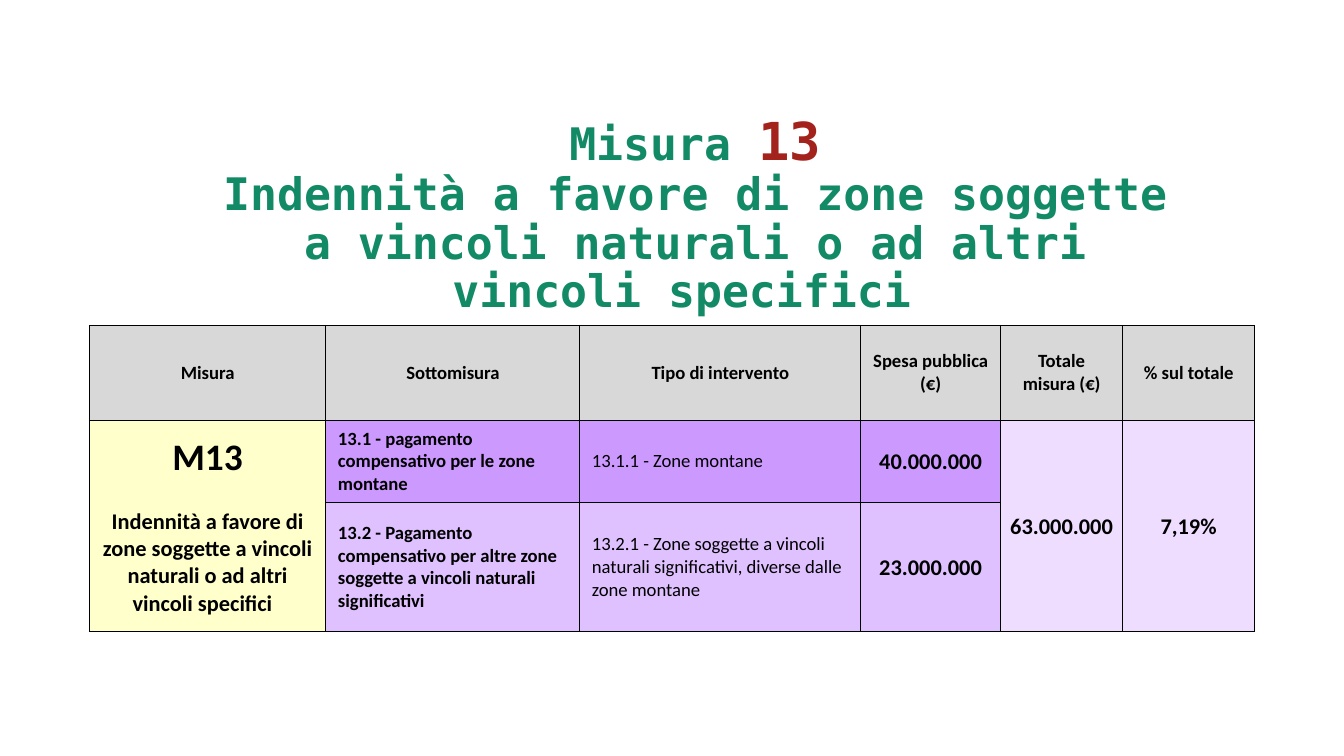
from lxml import etree
from pptx import Presentation
from pptx import util as u
from pptx.dml.color import RGBColor
from pptx.enum import text
from pptx.oxml.ns import qn

BLACK = RGBColor(0x00, 0x00, 0x00)
GREEN = RGBColor(0x12, 0x8A, 0x66)
RED = RGBColor(0xA3, 0x23, 0x1C)
GREY = RGBColor(0xD8, 0xD8, 0xD8)
YELLOW = RGBColor(0xFF, 0xFF, 0xCC)
VIOLET = RGBColor(0xCC, 0x99, 0xFF)
LILAC = RGBColor(0xE0, 0xC1, 0xFF)
PALE = RGBColor(0xEE, 0xDD, 0xFF)

CENTER, LEFT = text.PP_ALIGN.CENTER, text.PP_ALIGN.LEFT
WIDE = (0.09, 0.04, 0.09, 0.04)
TIGHT = (0.01, 0.01, 0.01, 0)

# Percent of the slide's width and height
COLUMNS = (17.6, 18.9, 20.9, 10.4, 9.1, 9.8)
ROWS = (12.6, 10.85, 17.1)

HEADERS = ("Misura", "Sottomisura", "Tipo di intervento", "Spesa pubblica \n(€)",
           "Totale misura (€)", "% sul totale")
SUBMEASURES = (
    ("13.1 - pagamento compensativo per le zone montane",
     "13.1.1 - Zone montane", "40.000.000", VIOLET),
    ("13.2 - Pagamento compensativo per altre zone soggette a vincoli naturali significativi",
     "13.2.1 - Zone soggette a vincoli naturali significativi, diverse dalle zone montane",
     "23.000.000", LILAC),
)
NAME = "Indennità a favore di zone soggette a vincoli naturali o ad altri vincoli specifici "


class Deck:
    """Holds the style and the current slide; lengths are percents of its size."""
    title_font, table_font = "DejaVu Sans Mono", "Calibri"

    def __init__(self, prs):
        self.prs = prs
        self.slide = prs.slides.add_slide(prs.slide_layouts[5])

    def box(self, left, top, width, height):
        return self.x(left), self.y(top), self.x(width), self.y(height)

    def x(self, percent):
        return u.Emu(round(self.prs.slide_width * percent / 100))

    def y(self, percent):
        return u.Emu(round(self.prs.slide_height * percent / 100))

    def title(self, lines, *place):
        """Each line is a list of (words, size, colour) runs."""
        sp = self.slide.shapes.title
        sp.left, sp.top, sp.width, sp.height = self.box(*place)
        tf = sp.text_frame
        tf.word_wrap = True
        tf.auto_size = text.MSO_AUTO_SIZE.SHAPE_TO_FIT_TEXT
        tf.vertical_anchor = text.MSO_ANCHOR.TOP
        tf.margin_left, tf.margin_top, tf.margin_right, tf.margin_bottom = map(u.Inches, WIDE)
        for i, runs in enumerate(lines):
            p = tf.add_paragraph() if i else tf.paragraphs[0]
            p.alignment, p.line_spacing, p.space_before = CENTER, 0.9, u.Pt(0)
            p.font.name, p.font.bold = self.title_font, True
            for words, size, color in runs:
                r = p.add_run()
                r.text = words
                r.font.size, r.font.color.rgb = u.Pt(size), color

    def table(self, left, top, columns, rows):
        place = self.box(left, top, sum(columns), sum(rows))
        table = self.slide.shapes.add_table(len(rows), len(columns), *place).table
        table.first_row = table.horz_banding = False
        for column, width in zip(table.columns, columns):
            column.width = self.x(width)
        for row, height in zip(table.rows, rows):
            row.height = self.y(height)
        return table

    def cell(self, cell, words, fill, size=10, bold=True, align=CENTER, margins=WIDE):
        self.paint(cell, fill)
        cell.vertical_anchor = text.MSO_ANCHOR.MIDDLE
        (cell.margin_left, cell.margin_top,
         cell.margin_right, cell.margin_bottom) = map(u.Inches, margins)
        tf = cell.text_frame
        for i, line in enumerate(words.split("\n")):
            p = tf.add_paragraph() if i else tf.paragraphs[0]
            p.text, p.alignment = line, align
            p.font.name, p.font.size = self.table_font, u.Pt(size)
            p.font.bold, p.font.color.rgb = bold, BLACK
        return tf

    def paint(self, cell, fill):
        """Fills a cell and draws its four borders."""
        cell.fill.solid()
        cell.fill.fore_color.rgb = fill
        props = cell._tc.get_or_add_tcPr()
        for i, side in enumerate(("lnL", "lnR", "lnT", "lnB")):
            line = etree.Element(qn("a:" + side), w=str(u.Pt(0.5)))
            solid = etree.SubElement(line, qn("a:solidFill"))
            etree.SubElement(solid, qn("a:srgbClr"), val=str(BLACK))
            props.insert(i, line)

    def tall_cell(self, table, col, words, fill, **style):
        """A cell that spans both rows below the header."""
        top, bottom = table.cell(1, col), table.cell(2, col)
        top.merge(bottom)
        self.paint(bottom, fill)
        return self.cell(top, words, fill, **style)


def main():
    prs = Presentation()
    prs.slide_width = u.Inches(10)
    prs.slide_height = u.Emu(prs.slide_width * 9 // 16)
    deck = Deck(prs)
    deck.title([[("Misura ", 24, GREEN), ("13", 28, RED)], [(NAME, 24, GREEN)]],
               15.37, 14.6, 72.7, 22)

    table = deck.table(6.65, 43.02, COLUMNS, ROWS)
    for col, header in enumerate(HEADERS):
        deck.cell(table.cell(0, col), header, GREY)
    for row, (submeasure, intervention, spending, fill) in enumerate(SUBMEASURES, 1):
        deck.cell(table.cell(row, 1), submeasure, fill, align=LEFT)
        deck.cell(table.cell(row, 2), intervention, fill, bold=False, align=LEFT)
        deck.cell(table.cell(row, 3), spending, fill, size=12, margins=TIGHT)

    code, name = deck.tall_cell(table, 0, "M13\n" + NAME + " ", YELLOW, size=12).paragraphs
    code.font.size = u.Pt(20)
    name.space_before = u.Pt(14.65)
    for col, total in ((4, "63.000.000"), (5, "7,19%")):
        deck.tall_cell(table, col, total, PALE, size=12, margins=TIGHT)
    prs.save("out.pptx")


if __name__ == "__main__":
    main()
